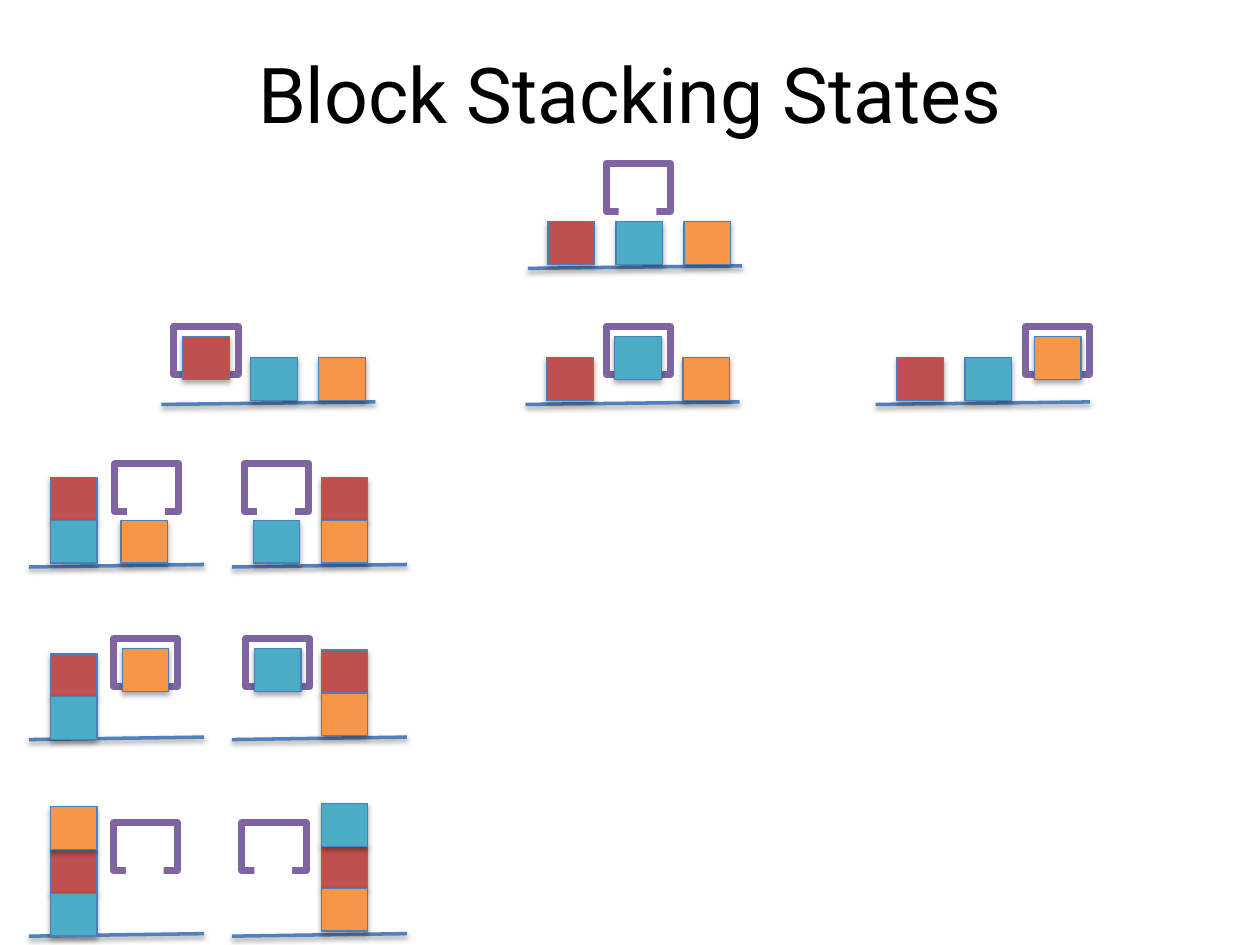
from dataclasses import dataclass

from lxml.etree import SubElement
from pptx import Presentation
from pptx.dml.color import RGBColor
from pptx.enum.shapes import MSO_CONNECTOR as Connector, MSO_SHAPE as Shape
from pptx.enum.text import MSO_ANCHOR as Anchor, PP_ALIGN as Align
from pptx.oxml.ns import qn
from pptx.util import Inches, Pt

RED, TEAL, ORANGE = "C0504D", "4BACC6", "F79646"
PURPLE, BLUE, EDGE, WHITE, BLACK = "8064A2", "4F81BD", "4B7EBC", "FFFFFF", "000000"
BLOCK_WIDTH, BLOCK_HEIGHT = 0.37, 0.34
WIDE, NARROW = 1.7, 1.39
TITLE_FORMAT = {"name": "Roboto", "size": Pt(44), "bold": False}


@dataclass(frozen=True)
class Stack:
    left: float
    top: float
    colors: tuple[str, ...]


@dataclass(frozen=True)
class Claw:
    left: float
    top: float
    held: str | None = None


@dataclass(frozen=True)
class State:
    table_left: float
    table_top: float
    table_width: float
    claw: Claw
    stacks: tuple[Stack, ...]


def single_blocks(left: float, top: float, colors: dict[int, str]) -> tuple[Stack, ...]:
    return tuple(Stack(left + 0.54 * column, top, (color,)) for column, color in colors.items())


STATES = (
    State(4.19, 2.11, WIDE, Claw(4.81, 1.3),
          single_blocks(4.35, 1.76, {0: RED, 1: TEAL, 2: ORANGE})),
    State(1.28, 3.19, WIDE, Claw(1.38, 2.59, RED),
          single_blocks(1.45, 2.84, {1: TEAL, 2: ORANGE})),
    State(4.17, 3.19, WIDE, Claw(4.81, 2.59, TEAL),
          single_blocks(4.34, 2.84, {0: RED, 2: ORANGE})),
    State(6.95, 3.19, WIDE, Claw(8.14, 2.59, ORANGE),
          single_blocks(7.12, 2.84, {0: RED, 1: TEAL})),
    State(0.23, 4.48, NARROW, Claw(0.91, 3.68),
          (Stack(0.4, 3.79, (RED, TEAL)), Stack(0.96, 4.13, (ORANGE,)))),
    State(1.84, 4.48, NARROW, Claw(1.94, 3.68),
          (Stack(2.55, 3.79, (RED, ORANGE)), Stack(2.01, 4.13, (TEAL,)))),
    State(0.23, 5.85, NARROW, Claw(0.9, 5.07, ORANGE),
          (Stack(0.4, 5.19, (RED, TEAL)),)),
    State(1.84, 5.85, NARROW, Claw(1.95, 5.07, TEAL),
          (Stack(2.55, 5.16, (RED, ORANGE)),)),
    State(0.23, 7.41, NARROW, Claw(0.9, 6.53),
          (Stack(0.4, 6.75, (RED, TEAL)), Stack(0.4, 6.4, (ORANGE,)))),
    State(1.84, 7.41, NARROW, Claw(1.92, 6.53),
          (Stack(2.55, 6.71, (RED, ORANGE)), Stack(2.55, 6.38, (TEAL,)))),
)


def rgb(color: str) -> RGBColor:
    return RGBColor.from_string(color)


def set_line(line, color: str, width: float) -> None:
    line.color.rgb = rgb(color)
    line.width = Pt(width)


def add_shadow(item, opacity: int, distance: float) -> None:
    effects = SubElement(item._element.spPr, qn("a:effectLst"))
    shadow = SubElement(effects, qn("a:outerShdw"), blurRad=str(Pt(3.1)),
                        dist=str(Pt(distance)), dir="5400000", rotWithShape="0")
    color = SubElement(shadow, qn("a:srgbClr"), val=BLACK)
    SubElement(color, qn("a:alpha"), val=str(opacity * 1000))


def add_rectangle(shapes, left: float, top: float, width: float, height: float,
                  fill: str | None = None):
    shape = shapes.add_shape(Shape.RECTANGLE, Inches(left), Inches(top),
                             Inches(width), Inches(height))
    if fill:
        shape.fill.solid()
        shape.fill.fore_color.rgb = rgb(fill)
    else:
        shape.fill.background()
    return shape


def draw_block(shapes, left: float, top: float, color: str) -> None:
    block = add_rectangle(shapes, left, top, BLOCK_WIDTH, BLOCK_HEIGHT, color)
    set_line(block.line, EDGE, 0.75)
    add_shadow(block, 35, 1.8)


def draw_claw(shapes, claw: Claw) -> None:
    target = shapes if claw.held else shapes.add_group_shape().shapes
    frame = add_rectangle(target, claw.left, claw.top, 0.51, 0.38)
    set_line(frame.line, PURPLE, 4)
    frame.shadow.inherit = False
    if claw.held:
        draw_block(shapes, claw.left + 0.07, claw.top + 0.08, claw.held)
    else:
        opening = add_rectangle(target, claw.left + 0.1, claw.top + 0.31, 0.3, 0.12, WHITE)
        opening.line.fill.background()
        opening.shadow.inherit = False


def draw_state(shapes, state: State) -> None:
    table = shapes.add_connector(
        Connector.STRAIGHT, Inches(state.table_left), Inches(state.table_top + 0.02),
        Inches(state.table_left + state.table_width), Inches(state.table_top))
    set_line(table.line, BLUE, 2)
    add_shadow(table, 38, 1.6)
    for stack in state.stacks:
        for level, color in enumerate(stack.colors):
            draw_block(shapes, stack.left, stack.top + BLOCK_HEIGHT * level, color)
    draw_claw(shapes, state.claw)


def write_title(title) -> None:
    bounds = {"left": 0.5, "top": 0.11, "width": 9, "height": 1.25}
    for name, value in bounds.items():
        setattr(title, name, Inches(value))
    title.text_frame.text = "Block Stacking States"
    title.text_frame.vertical_anchor = Anchor.MIDDLE
    paragraph = title.text_frame.paragraphs[0]
    paragraph.alignment = Align.CENTER
    font = paragraph.runs[0].font
    for name, value in TITLE_FORMAT.items():
        setattr(font, name, value)
    font.color.rgb = rgb(BLACK)


def main() -> None:
    presentation = Presentation()
    presentation.slide_width = Inches(10)
    presentation.slide_height = Inches(7.5)
    slide = presentation.slides.add_slide(presentation.slide_layouts[5])
    write_title(slide.shapes.title)
    for state in STATES:
        draw_state(slide.shapes, state)
    presentation.save("out.pptx")


if __name__ == "__main__":
    main()
